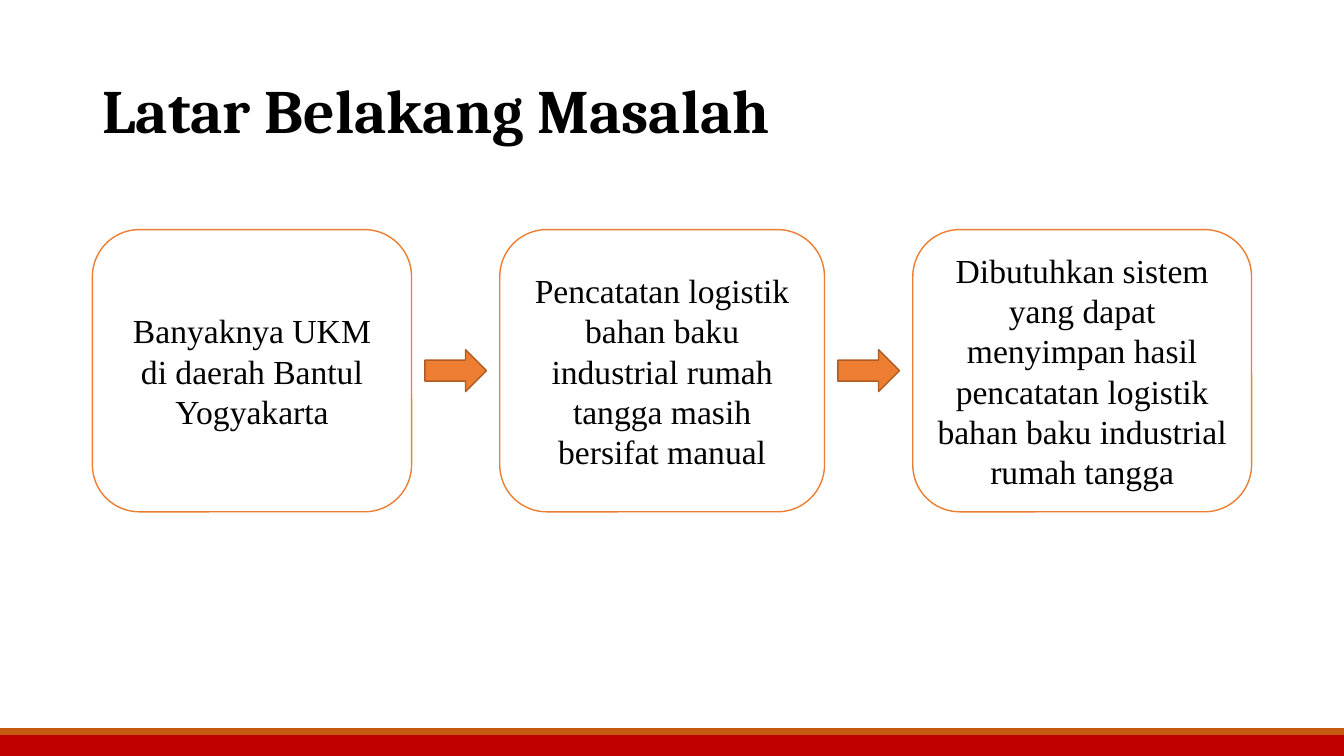
from pptx import Presentation
from pptx.dml.color import RGBColor
from pptx.enum.shapes import MSO_SHAPE
from pptx.enum.text import MSO_ANCHOR, PP_ALIGN
from pptx.util import Pt

RECT = MSO_SHAPE.RECTANGLE
ROUNDED = MSO_SHAPE.ROUNDED_RECTANGLE
ARROW = MSO_SHAPE.RIGHT_ARROW
MIDDLE = MSO_ANCHOR.MIDDLE
LEFT, CENTER = PP_ALIGN.LEFT, PP_ALIGN.CENTER

SLIDE_W, SLIDE_H = 960, 540
STEP_GAP = 63
ARROW_W, ARROW_H = 44, 30
STEPS = [
    (228, "Banyaknya UKM di daerah Bantul Yogyakarta"),
    (232, "Pencatatan logistik bahan baku industrial rumah tangga masih "
          "bersifat manual"),
    (242, "Dibutuhkan sistem yang dapat menyimpan hasil pencatatan logistik "
          "bahan baku industrial rumah tangga"),
]


def color(value):
    return RGBColor.from_string(value)


def add_box(s, kind, x, y, w, h, fill, line):
    sp = s.shapes.add_shape(kind, Pt(x), Pt(y), Pt(w), Pt(h))
    sp.shadow.inherit = False
    sp.fill.solid()
    sp.fill.fore_color.rgb = color(fill)
    sp.line.color.rgb = color(line)
    sp.line.width = Pt(1)
    return sp


def set_text(sp, text, font, size, align, bold=False):
    tf = sp.text_frame
    tf.text = text
    tf.word_wrap = True
    tf.vertical_anchor = MIDDLE
    p = tf.paragraphs[0]
    p.alignment = align
    r = p.runs[0]
    r.font.name = font
    r.font.size = Pt(size)
    r.font.bold = bold
    r.font.color.rgb = color("000000")
    return p


def add_title(s, x, y, w, h):
    title = s.shapes.title
    title.left, title.top, title.width, title.height = Pt(x), Pt(y), Pt(w), Pt(h)
    p = set_text(title, "Latar Belakang Masalah", "Cambria", 44, LEFT, True)
    p.line_spacing = 0.9


def add_footer(s, x, y, w, h):
    stripe_h = 4
    add_box(s, RECT, x, y + stripe_h, w, h - stripe_h, "C00000", "C00000")
    add_box(s, RECT, x, y, w, stripe_h, "C55A11", "C55A11")


def add_flow(s, x, y, h):
    for i, (w, text) in enumerate(STEPS):
        if i:
            add_box(s, ARROW, x - (STEP_GAP + ARROW_W) / 2, y + (h - ARROW_H) / 2,
                    ARROW_W, ARROW_H, "ED7D31", "AF5C24")
        sp = add_box(s, ROUNDED, x, y, w, h, "FFFFFF", "ED7D31")
        set_text(sp, text, "Times New Roman", 24, CENTER)
        x += w + STEP_GAP


def main():
    prs = Presentation()
    prs.slide_width, prs.slide_height = Pt(SLIDE_W), Pt(SLIDE_H)
    s = prs.slides.add_slide(prs.slide_layouts[5])
    add_title(s, 66, 28.8, 828, 104.4)
    add_footer(s, 0, 520.4, SLIDE_W, 19.6)
    add_flow(s, 66, 164, 201.6)
    prs.save("out.pptx")


if __name__ == "__main__":
    main()
